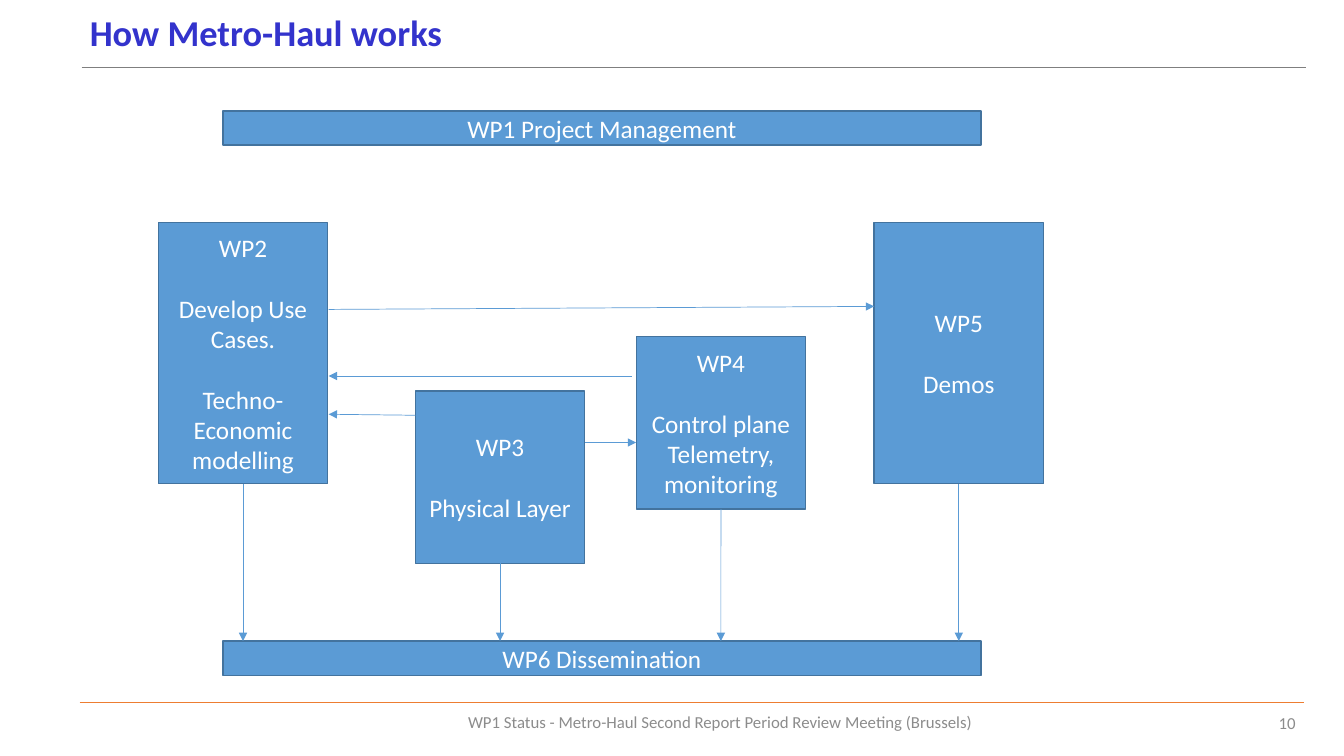
import pptx
import pptx.util
import pptx.dml.color
import pptx.enum.shapes
import pptx.enum.text
import pptx.oxml.ns
import lxml.etree

Inches, Pt = pptx.util.Inches, pptx.util.Pt
ALIGN = pptx.enum.text.PP_ALIGN
MIDDLE = pptx.enum.text.MSO_ANCHOR.MIDDLE

# Content
FONT = "Calibri"
COLORS = {"title": "3333CC", "box": "5B9BD5", "edge": "43739E", "text": "FFFFFF",
          "foot": "8C8C8C", "head rule": "7F7F7F", "foot rule": "ED7D31"}
TITLE = "How Metro-Haul works"

# Text, left, top, width, height, alignment
FOOTERS = [
    ("10", 12.49, 6.97, 0.46, 0.4, ALIGN.RIGHT),
    ("WP1 Status - Metro-Haul Second Report Period Review Meeting (Brussels)",
     1.91, 6.96, 10.47, 0.4, ALIGN.CENTER),
]
RULES = [("head rule", 0.81, 0.67), ("foot rule", 0.79, 6.97)]
RULE_W = 12.14

# Bars above and below the packages: text, top
BAR_X, BAR_W, BAR_H = 2.21, 7.52, 0.34
BARS = [("WP1 Project Management", 1.1), ("WP6 Dissemination", 6.36)]

# Work packages: left, top, height, blocks of lines
PACK_W, GAP = 1.68, 22
PACKS = {
    "WP2": (1.57, 2.21, 2.59, [["Develop Use Cases."], ["Techno-Economic modelling"]]),
    "WP4": (6.31, 3.34, 1.71, [["Control plane", "Telemetry, monitoring"]]),
    "WP3": (4.12, 3.88, 1.71, [["Physical Layer"]]),
    "WP5": (8.67, 2.21, 2.59, [["Demos"]]),
}

# Flows between packages: start x, y, end x, y
FLOWS = [
    (3.26, 3.07, 8.67, 3.04),
    (5.8, 4.39, 6.31, 4.39),
    (4.12, 4.12, 3.26, 4.11),
    (6.27, 3.73, 3.26, 3.73),
]

deck = pptx.Presentation()
deck.slide_width, deck.slide_height = Inches(13.33), Inches(7.5)
slide = deck.slides.add_slide(deck.slide_layouts[5])
shapes = slide.shapes


def rgb(name):
    return pptx.dml.color.RGBColor.from_string(COLORS[name])


def style(para, size, color, align, bold=False):
    para.alignment = align
    for run in para.runs:
        run.font.name, run.font.size, run.font.bold = FONT, Pt(size), bold
        run.font.color.rgb = rgb(color)


def draw_line(x1, y1, x2, y2, color, arrow=False):
    line = shapes.add_connector(pptx.enum.shapes.MSO_CONNECTOR.STRAIGHT,
                                Inches(x1), Inches(y1), Inches(x2), Inches(y2))
    line.line.color.rgb = rgb(color)
    line.line.width = Pt(0.5)
    qn = pptx.oxml.ns.qn
    if arrow:
        lxml.etree.SubElement(line.line._get_or_add_ln(), qn("a:tailEnd"), type="triangle")
    lxml.etree.SubElement(line._element.spPr, qn("a:effectLst"))
    return line


def draw_box(x, y, w, h, blocks):
    box = shapes.add_shape(pptx.enum.shapes.MSO_SHAPE.RECTANGLE,
                           Inches(x), Inches(y), Inches(w), Inches(h))
    box.shadow.inherit = False
    box.fill.solid()
    box.fill.fore_color.rgb = rgb("box")
    box.line.color.rgb = rgb("edge")
    box.line.width = Pt(1)
    frame = box.text_frame
    frame.word_wrap, frame.vertical_anchor = True, MIDDLE
    frame.text = "\n".join(text for block in blocks for text in block)
    starts = [sum(map(len, blocks[:i])) for i in range(1, len(blocks))]
    for i, para in enumerate(frame.paragraphs):
        style(para, 18, "text", ALIGN.CENTER)
        if i in starts:
            para.space_before = Pt(GAP)
    return box


# Title and rules
for color, x, y in RULES:
    draw_line(x, y, x + RULE_W, y, color)
title = shapes.title
title.left, title.top = Inches(0.79), Inches(0)
title.width, title.height = Inches(10.97), Inches(0.68)
title.text_frame.text = TITLE
title.text_frame.vertical_anchor = MIDDLE
head = title.text_frame.paragraphs[0]
head.line_spacing = 0.9
style(head, 26, "title", ALIGN.LEFT, True)

# Footer
for text, x, y, w, h, align in FOOTERS:
    note = shapes.add_textbox(Inches(x), Inches(y), Inches(w), Inches(h))
    frame = note.text_frame
    frame.word_wrap, frame.vertical_anchor = True, MIDDLE
    frame.text = text
    style(frame.paragraphs[0], 12, "foot", align)

# Packages and bars
packs = {name: draw_box(x, y, PACK_W, h, [[name]] + blocks)
         for name, (x, y, h, blocks) in PACKS.items()}
for text, y in BARS:
    draw_box(BAR_X, y, BAR_W, BAR_H, [[text]])

# Arrows from each package down to the lower bar
floor = BARS[-1][1]
for name, (x, y, h, blocks) in PACKS.items():
    mid = x + PACK_W / 2
    drop = draw_line(mid, y + h, mid, floor, "box", True)
    drop.begin_connect(packs[name], 2)

# Arrows between packages
for flow in FLOWS:
    draw_line(*flow, "box", True)

deck.save("out.pptx")
